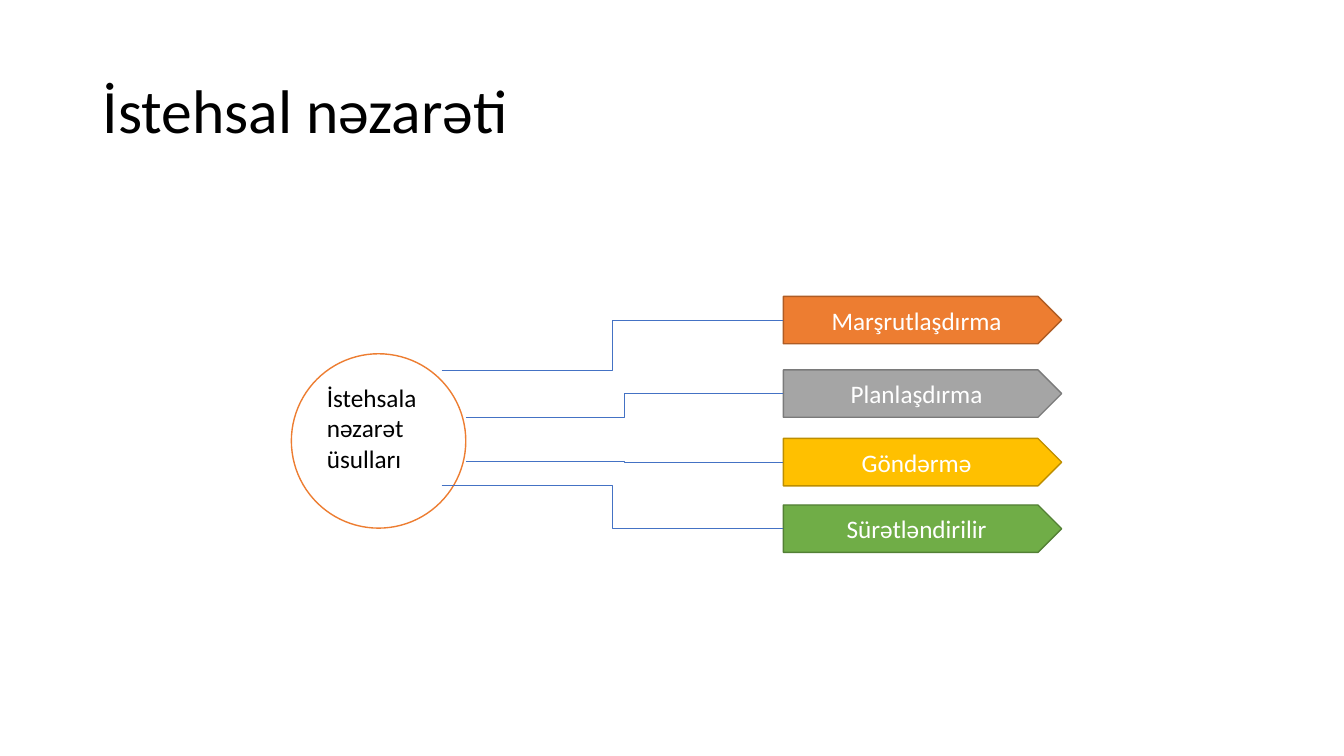
from lxml import etree
from pptx import Presentation
from pptx.dml.color import RGBColor
from pptx.enum.shapes import MSO_CONNECTOR, MSO_SHAPE
from pptx.enum.text import MSO_ANCHOR, MSO_AUTO_SIZE, PP_ALIGN
from pptx.oxml.ns import qn
from pptx.util import Inches, Pt

ELBOW = MSO_CONNECTOR.ELBOW
CIRCLE, PENTAGON = MSO_SHAPE.OVAL, MSO_SHAPE.PENTAGON
MIDDLE = MSO_ANCHOR.MIDDLE
NO_AUTOFIT = MSO_AUTO_SIZE.NONE
LEFT, CENTER = PP_ALIGN.LEFT, PP_ALIGN.CENTER

FONT = "Calibri"
COLORS = {
    "text": "000000", "white": "FFFFFF", "link": "4472C4",
    "orange": "ED7D31", "orange_edge": "AF5C24",
    "gray": "A5A5A5", "gray_edge": "7A7A7A",
    "gold": "FFC000", "gold_edge": "BD8E00",
    "green": "70AD47", "green_edge": "538035",
}

TITLE_BOX = (0.92, 0.4, 11.5, 1.45)
HUB_BOX = (2.89, 3.51, 1.73, 1.73)
METHOD_LEFT, METHOD_WIDTH, METHOD_HEIGHT = 7.77, 2.76, 0.47
# label, colour, top of the box, start of its link relative to the hub box
METHODS = [
    ("Marşrutlaşdırma", "orange", 2.94, (1.49, 0.16)),
    ("Planlaşdırma", "gray", 3.67, (1.73, 0.63)),
    ("Göndərmə", "gold", 4.35, (1.73, 1.07)),
    ("Sürətləndirilir", "green", 5.01, (1.49, 1.31)),
]


def rgb(name):
    return RGBColor.from_string(COLORS[name])


def set_text(shape, text, size, color, align):
    frame = shape.text_frame
    frame.text = text
    frame.word_wrap = True
    frame.auto_size = NO_AUTOFIT
    frame.vertical_anchor = MIDDLE
    paragraph = frame.paragraphs[0]
    paragraph.alignment = align
    font = paragraph.runs[0].font
    font.name, font.size = FONT, Pt(size)
    font.color.rgb = rgb(color)


def add_title(slide, box):
    title = slide.shapes.title
    title.left, title.top, title.width, title.height = map(Inches, box)
    set_text(title, "İstehsal nəzarəti", 44, "text", LEFT)
    title.text_frame.paragraphs[0].line_spacing = 0.9


def add_filled_shape(slide, kind, box, fill, edge):
    shape = slide.shapes.add_shape(kind, *map(Inches, box))
    shape.shadow.inherit = False
    shape.fill.solid()
    shape.fill.fore_color.rgb = rgb(fill)
    shape.line.color.rgb = rgb(edge)
    shape.line.width = Pt(1)
    return shape


def add_hub(slide, box):
    hub = add_filled_shape(slide, CIRCLE, box, "white", "orange")
    set_text(hub, "İstehsala nəzarət üsulları", 18, "text", LEFT)
    hub.text_frame.margin_top = 0
    hub.text_frame.margin_bottom = Inches(0.26)


def add_method(slide, box, label, color):
    method = add_filled_shape(slide, PENTAGON, box, color, f"{color}_edge")
    set_text(method, label, 18, "white", CENTER)


def add_link(slide, start, end):
    link = slide.shapes.add_connector(ELBOW, *map(Inches, (*start, *end)))
    link.line.color.rgb = rgb("link")
    link.line.width = Pt(0.5)
    etree.SubElement(link._element.spPr, qn("a:effectLst"))


def add_method_diagram(slide, hub_box):
    hub_left, hub_top = hub_box[:2]
    add_hub(slide, hub_box)
    for label, color, top, _ in METHODS:
        box = (METHOD_LEFT, top, METHOD_WIDTH, METHOD_HEIGHT)
        add_method(slide, box, label, color)
    for _, _, top, (dx, dy) in METHODS:
        start = (hub_left + dx, hub_top + dy)
        add_link(slide, start, (METHOD_LEFT, top + METHOD_HEIGHT / 2))


def main():
    presentation = Presentation()
    presentation.slide_width = Inches(13.33)
    presentation.slide_height = Inches(7.5)
    slide = presentation.slides.add_slide(presentation.slide_layouts[5])
    add_title(slide, TITLE_BOX)
    add_method_diagram(slide, HUB_BOX)
    presentation.save("out.pptx")


if __name__ == "__main__":
    main()
